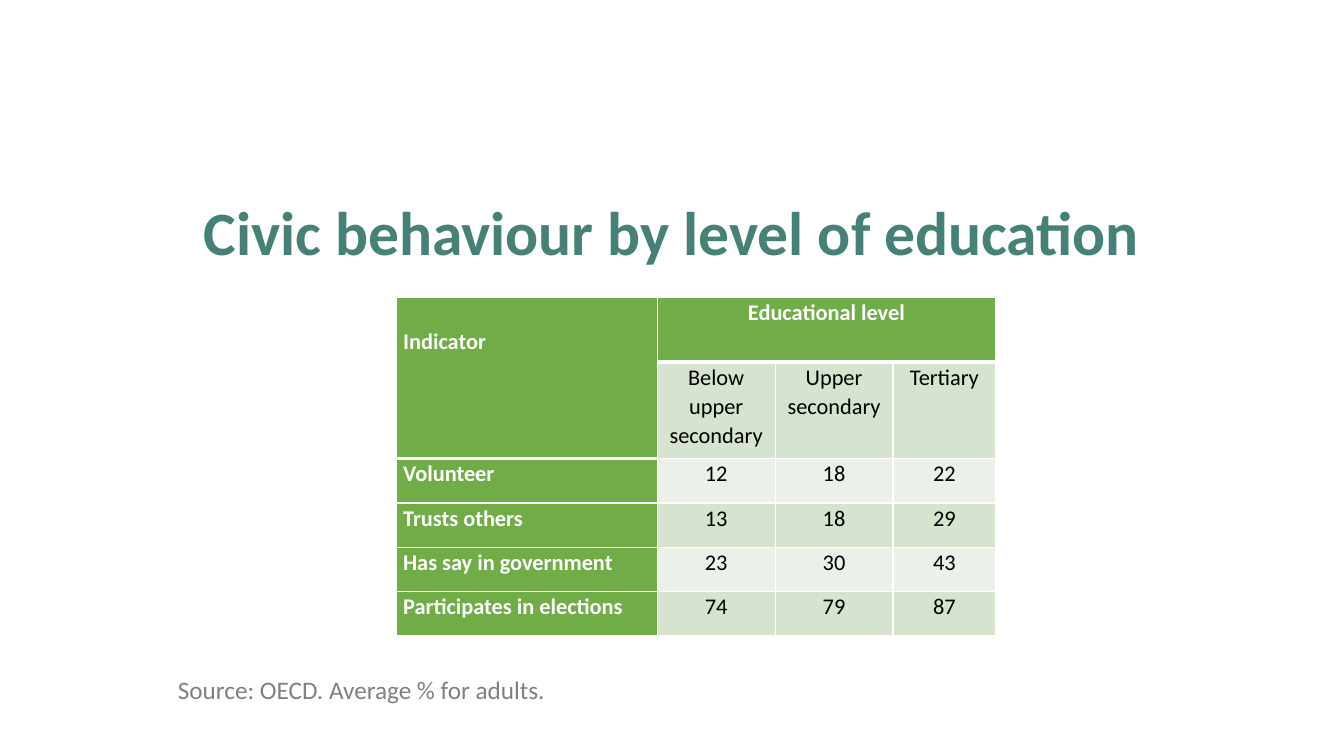
"""Build the slide on civic behaviour by level of education."""
from dataclasses import dataclass

from lxml import etree
from pptx import Presentation
from pptx.dml.color import RGBColor
from pptx.enum import text
from pptx.oxml import ns
from pptx.util import Inches, Pt

SLIDE_WIDTH, SLIDE_HEIGHT = Inches(13.333), Inches(7.5)
COLUMN, ROW = SLIDE_WIDTH / 80, SLIDE_HEIGHT / 75

INDICATORS = [
    ("Volunteer", 12, 18, 22),
    ("Trusts others", 13, 18, 29),
    ("Has say in government", 23, 30, 43),
    ("Participates in elections", 74, 79, 87),
]
LEVELS = ("Below\nupper\nsecondary", "Upper\nsecondary", "Tertiary")
COLUMN_SPANS = (15.54, 7.02, 7.02, 6.12)
ROW_SPANS = (6.4, 9.6) + (4.4,) * len(INDICATORS)


@dataclass(frozen=True)
class Theme:
    """Hold the colours and type sizes of the slide."""

    font: str = "Calibri"
    title: str = "468177"
    source: str = "808080"
    heading: str = "70AD47"
    bands: tuple = ("EBF1E9", "D5E3CF")
    light: str = "FFFFFF"
    dark: str = "000000"
    title_size: int = 44
    source_size: int = 18
    table_size: int = 16
    thin: int = 1
    thick: int = 3


THEME = Theme()


def across(columns):
    """Turn grid columns into a length."""
    return round(columns * COLUMN)


def down(rows):
    """Turn grid rows into a length."""
    return round(rows * ROW)


def style_paragraph(paragraph, size, colour, bold, align, spacing):
    """Set the font, alignment and line spacing of a paragraph."""
    paragraph.alignment = align
    paragraph.line_spacing = spacing
    font = paragraph.font
    font.name, font.size, font.bold = THEME.font, Pt(size), bold
    font.color.rgb = RGBColor.from_string(colour)


def add_line(slide, wording, top, height, size, colour, bold, align, anchor):
    """Add one line of text across the middle of the slide."""
    box = slide.shapes.add_textbox(across(10), down(top), across(60), down(height))
    frame = box.text_frame
    frame.word_wrap = True
    frame.vertical_anchor = anchor
    frame.text = wording
    style_paragraph(frame.paragraphs[0], size, colour, bold, align, 0.9)


def add_border(cell, side, width):
    """Draw one border of a cell."""
    edge = etree.SubElement(cell._tc.get_or_add_tcPr(), ns.qn(f"a:ln{side}"), w=str(Pt(width)))
    fill = etree.SubElement(edge, ns.qn("a:solidFill"))
    etree.SubElement(fill, ns.qn("a:srgbClr"), val=THEME.light)


def style_cell(cell, row, column):
    """Give a cell its borders, fill and insets by its place in the table."""
    is_heading = row == 0 or column == 0
    heading_end = 1 if column == 0 else 0
    for side in "LRTB":
        under_heading = (side, row) in (("B", heading_end), ("T", heading_end + 1))
        add_border(cell, side, THEME.thick if under_heading else THEME.thin)
    cell.fill.solid()
    fill = THEME.heading if is_heading else THEME.bands[row % 2]
    cell.fill.fore_color.rgb = RGBColor.from_string(fill)
    cell.margin_left = cell.margin_right = Inches(0.07)
    cell.margin_top = cell.margin_bottom = 0


def write_cell(cell, wording, row, column):
    """Write a heading, level or value into a cell."""
    is_heading = row == 0 or column == 0
    cell.text = str(wording)
    align = text.PP_ALIGN.JUSTIFY if column == 0 else text.PP_ALIGN.CENTER
    colour = THEME.light if is_heading else THEME.dark
    for paragraph in cell.text_frame.paragraphs:
        style_paragraph(paragraph, THEME.table_size, colour, is_heading, align, 1.07)


def add_indicator_table(slide):
    """Add the table of indicators by educational level."""
    table = slide.shapes.add_table(
        len(ROW_SPANS), len(COLUMN_SPANS), across(23.58), down(29.5),
        across(sum(COLUMN_SPANS)), down(sum(ROW_SPANS))).table
    table.first_row = table.horz_banding = False
    for column, span in zip(table.columns, COLUMN_SPANS):
        column.width = across(span)
    for row, span in zip(table.rows, ROW_SPANS):
        row.height = down(span)

    contents = [("Indicator", "Educational level", "", ""), ("", *LEVELS), *INDICATORS]
    for row, wordings in enumerate(contents):
        for column, wording in enumerate(wordings):
            cell = table.cell(row, column)
            style_cell(cell, row, column)
            write_cell(cell, wording, row, column)

    indicator = table.cell(0, 0)
    indicator.margin_top = down(2.9)
    indicator.merge(table.cell(1, 0))
    table.cell(0, 1).merge(table.cell(0, 3))


def main():
    """Build and save the slide."""
    deck = Presentation()
    deck.slide_width, deck.slide_height = SLIDE_WIDTH, SLIDE_HEIGHT
    slide = deck.slides.add_slide(deck.slide_layouts[6])
    add_line(slide, "Civic behaviour by level of education", 15.2, 12, THEME.title_size,
             THEME.title, True, text.PP_ALIGN.CENTER, text.MSO_ANCHOR.BOTTOM)
    add_line(slide, "Source: OECD. Average % for adults.", 66.7, 4.5, THEME.source_size,
             THEME.source, False, text.PP_ALIGN.LEFT, text.MSO_ANCHOR.TOP)
    add_indicator_table(slide)
    deck.save("out.pptx")


if __name__ == "__main__":
    main()
